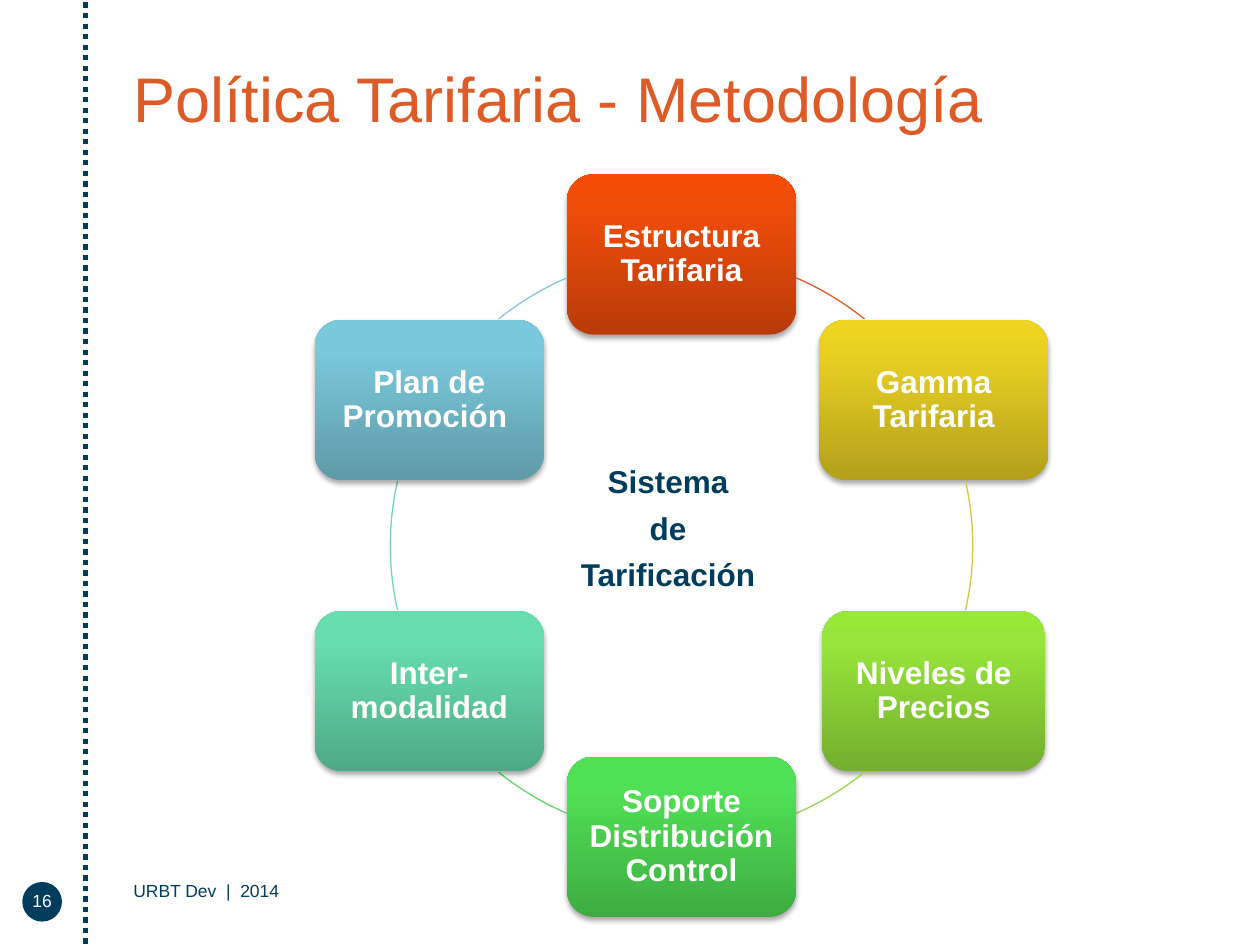
import math

import lxml.etree
import pptx
import pptx.dml.color
import pptx.enum.dml
import pptx.enum.shapes
import pptx.enum.text
import pptx.oxml
import pptx.oxml.ns
import pptx.util

Cm = pptx.util.Cm
Pt = pptx.util.Pt
SHAPE = pptx.enum.shapes.MSO_SHAPE
ALIGN = pptx.enum.text.PP_ALIGN
ANCHOR = pptx.enum.text.MSO_ANCHOR
qn = pptx.oxml.ns.qn

COLORS = {"navy": "003D5D", "orange": "DC5B26", "white": "FFFFFF", "shadow": "000000"}

# Ring geometry, in cm
CENTER_X, CENTER_Y, RADIUS = 13.74, 11.0, 5.87
BOX_WIDTH, BOX_HEIGHT = 4.62, 3.23

# Clockwise from the top: text, box width, gradient from bottom to top,
# then colour, middle angle and half span of the arc to the next box
STEPS = [
    ("Estructura Tarifaria", BOX_WIDTH, ("B93B08", "F04D0A", "F54C06"), "DC5B26", 301, 7.9),
    ("Gamma Tarifaria", BOX_WIDTH, ("B4A01B", "E9D023", "EED41F"), "D9C53C", 0, 12.8),
    ("Niveles de Precios", 4.5, ("74AF2D", "97E43A", "98E837"), "9AD750", 59, 7.9),
    ("Soporte Distribución Control", BOX_WIDTH, ("3EAC42", "50E055", "4EE353"), "64D668", 121, 7.9),
    ("Inter-modalidad", BOX_WIDTH, ("4EAA86", "66DDAF", "64E0B0"), "77D5B1", 180, 12.8),
    ("Plan de Promoción ", BOX_WIDTH, ("5E9AA8", "7AC8DB", "78CADD"), "89C7D6", 239, 7.9),
]


def rgb(value):
    return pptx.dml.color.RGBColor.from_string(value)


def place(shape, left, top, width, height):
    shape.left, shape.top = Cm(left), Cm(top)
    shape.width, shape.height = Cm(width), Cm(height)


def write(shape, text, size, color, align, anchor, bold=False, inset=0):
    frame = shape.text_frame
    frame.text = text
    frame.word_wrap = True
    frame.auto_size = pptx.enum.text.MSO_AUTO_SIZE.NONE
    frame.vertical_anchor = anchor
    frame.margin_left = frame.margin_right = Cm(inset)
    frame.margin_top = frame.margin_bottom = Cm(inset)
    for para in frame.paragraphs:
        para.alignment = align
        for span in para.runs:
            span.font.name = "Arial"
            span.font.size = Pt(size)
            span.font.bold = bold
            span.font.color.rgb = rgb(color)
    return frame


def add_text(page, area, text, color, align):
    box = page.shapes.add_textbox(*map(Cm, area))
    write(box, text, 10, color, align, ANCHOR.MIDDLE)


def add_title(page, text):
    title = page.shapes.title
    place(title, 2.69, 1.27, 22.4, 1.45)
    write(title, text, 36, COLORS["orange"], ALIGN.LEFT, ANCHOR.BOTTOM)


def add_center_text(page, lines):
    body = page.placeholders[1]
    place(body, 10.16, 9.32, 5.79, 3)
    frame = write(body, "\n".join(lines), 18, COLORS["navy"], ALIGN.CENTER, ANCHOR.TOP, bold=True)
    for number, para in enumerate(frame.paragraphs):
        properties = para._p.get_or_add_pPr()
        properties.set("marL", str(Cm(1)))
        properties.set("indent", "0")
        lxml.etree.SubElement(properties, qn("a:buNone"))
        para.space_before = Pt(5 if number else 0)


def set_gradient(shape, colors):
    shape.fill.gradient()
    shape.fill.gradient_angle = 90
    stops = shape._element.spPr.find(qn("a:gradFill")).find(qn("a:gsLst"))
    for stop in list(stops):
        stops.remove(stop)
    for position, color in zip((0, 80, 100), colors):
        stop = lxml.etree.SubElement(stops, qn("a:gs"), pos=str(position * 1000))
        lxml.etree.SubElement(stop, qn("a:srgbClr"), val=color)


def set_shadow(shape):
    shape.shadow.inherit = False
    effects = shape._element.spPr.find(qn("a:effectLst"))
    shadow = lxml.etree.SubElement(
        effects, qn("a:outerShdw"), blurRad=str(Pt(3.1)), dist=str(Pt(1.8)),
        dir="5400000", rotWithShape="0")
    color = lxml.etree.SubElement(shadow, qn("a:srgbClr"), val=COLORS["shadow"])
    lxml.etree.SubElement(color, qn("a:alpha"), val="35000")


def add_step(page, text, width, colors, angle):
    x = CENTER_X + RADIUS * math.cos(math.radians(angle))
    y = CENTER_Y + RADIUS * math.sin(math.radians(angle))
    box = page.shapes.add_shape(
        SHAPE.ROUNDED_RECTANGLE, Cm(x - width / 2), Cm(y - BOX_HEIGHT / 2),
        Cm(width), Cm(BOX_HEIGHT))
    set_gradient(box, colors)
    box.line.fill.background()
    set_shadow(box)
    frame = write(box, text, 18, COLORS["white"], ALIGN.CENTER, ANCHOR.MIDDLE, bold=True, inset=0.18)
    frame.paragraphs[0].line_spacing = 0.9


def add_arc(page, color, middle, half_span):
    arc = page.shapes.add_shape(
        SHAPE.ARC, Cm(CENTER_X - RADIUS), Cm(CENTER_Y - RADIUS),
        Cm(2 * RADIUS), Cm(2 * RADIUS))
    # Adjustments count 0.6 per degree
    arc.adjustments[0] = (middle - half_span) % 360 * 0.6
    arc.adjustments[1] = (middle + half_span) % 360 * 0.6
    arc.fill.background()
    arc.line.color.rgb = rgb(color)
    arc.line.width = Pt(0.75)
    arc.shadow.inherit = False


def add_margin(page):
    disc = page.shapes.add_shape(SHAPE.OVAL, Cm(0.45), Cm(17.78), Cm(0.8), Cm(0.8))
    disc.fill.solid()
    disc.fill.fore_color.rgb = rgb(COLORS["navy"])
    disc.line.fill.background()
    disc.shadow.inherit = False

    rule = page.shapes.add_connector(
        pptx.enum.shapes.MSO_CONNECTOR.STRAIGHT, Cm(1.73), Cm(0.05), Cm(1.73), Cm(19.1))
    rule.line.color.rgb = rgb(COLORS["navy"])
    rule.line.width = Pt(3)
    rule.line.dash_style = pptx.enum.dml.MSO_LINE.ROUND_DOT
    lxml.etree.SubElement(rule._element.spPr, qn("a:effectLst"))


def main():
    deck = pptx.Presentation()
    deck.slide_width, deck.slide_height = Cm(25.4), Cm(19.05)
    page = deck.slides.add_slide(deck.slide_layouts[1])

    # Margin, title and footer
    add_margin(page)
    add_title(page, "Política Tarifaria - Metodología")
    add_text(page, (2.69, 17.46, 15.8, 1), "URBT Dev  |  2014", COLORS["navy"], ALIGN.LEFT)
    add_text(page, (0, 17.65, 1.7, 1), "16", COLORS["white"], ALIGN.CENTER)

    # Ring of steps around the central text
    add_center_text(page, ["Sistema ", "de ", "Tarificación "])
    for number, (text, width, colors, arc_color, middle, half_span) in enumerate(STEPS):
        add_step(page, text, width, colors, number * 360 / len(STEPS) - 90)
        add_arc(page, arc_color, middle, half_span)

    deck.save("out.pptx")


if __name__ == "__main__":
    main()
